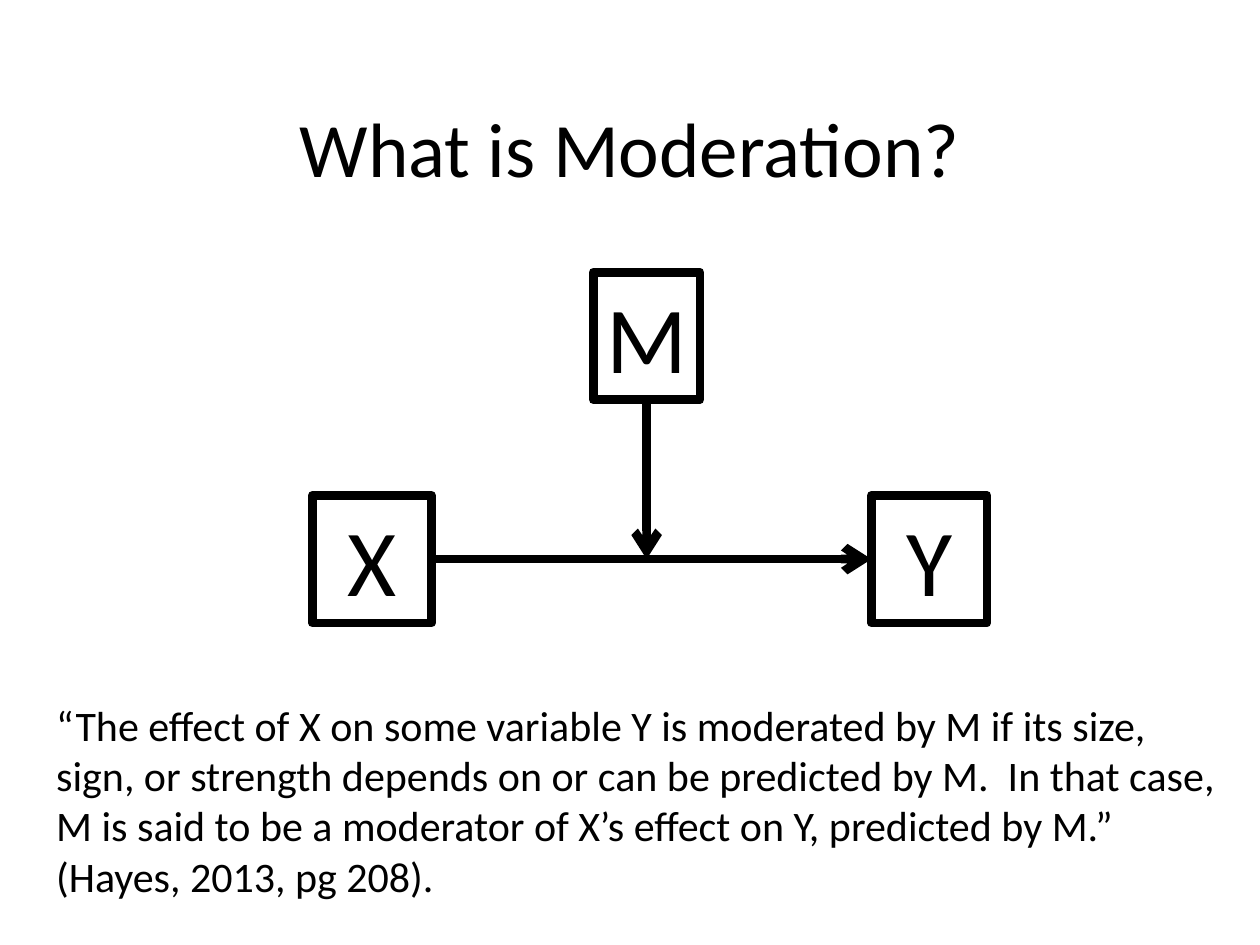
from lxml.etree import SubElement
from pptx import Presentation
from pptx.dml.color import RGBColor
from pptx.enum.shapes import MSO_CONNECTOR, MSO_SHAPE
from pptx.enum.text import MSO_ANCHOR, PP_ALIGN
from pptx.oxml.ns import qn
from pptx.util import Pt

BLACK = RGBColor(0, 0, 0)
FONT = "Calibri"
LINE_WIDTH = Pt(5)
BOX_HEIGHT = 73
ROW_TOP = 283
BOTTOM, LEFT, RIGHT = 2, 1, 3
QUOTE = [
    "“The effect of X on some variable Y is moderated by M if its size,",
    "sign, or strength depends on or can be predicted by M.  In that case,",
    "M is said to be a moderator of X’s effect on Y, predicted by M.”",
    "(Hayes, 2013, pg 208).",
]


def place(shape, left, top, width, height):
    shape.left, shape.top = Pt(left), Pt(top)
    shape.width, shape.height = Pt(width), Pt(height)


def format_text(frame, size, alignment):
    for paragraph in frame.paragraphs:
        paragraph.alignment = alignment
        for span in paragraph.runs:
            span.font.name = FONT
            span.font.size = Pt(size)
            span.font.color.rgb = BLACK


def set_title(page, text):
    title = page.shapes.title
    place(title, 0, 48, 720, 72)
    title.text_frame.text = text
    title.text_frame.vertical_anchor = MSO_ANCHOR.MIDDLE
    format_text(title.text_frame, 44, PP_ALIGN.CENTER)


def add_variable(page, name, left, top, width):
    box = page.shapes.add_shape(
        MSO_SHAPE.RECTANGLE, Pt(left), Pt(top), Pt(width), Pt(BOX_HEIGHT))
    box.shadow.inherit = False
    box.fill.background()
    box.line.color.rgb = BLACK
    box.line.width = LINE_WIDTH
    frame = box.text_frame
    frame.text = name
    frame.word_wrap = False
    frame.vertical_anchor = MSO_ANCHOR.MIDDLE
    format_text(frame, 54, PP_ALIGN.CENTER)
    return box


def add_arrow(page, source, side, end_x, end_y):
    """Draw an arrow from one side of the source box to a point."""
    arrow = page.shapes.add_connector(
        MSO_CONNECTOR.STRAIGHT, 0, 0, end_x, end_y)
    arrow.begin_connect(source, side)
    arrow.line.color.rgb = BLACK
    arrow.line.width = LINE_WIDTH
    SubElement(arrow.line._get_or_add_ln(), qn("a:tailEnd"), type="arrow")
    SubElement(arrow._element.spPr, qn("a:effectLst"))
    return arrow


def add_quote(page, lines):
    box = page.shapes.add_textbox(Pt(25), Pt(396), Pt(688), Pt(124))
    box.text_frame.text = "\n".join(lines)
    box.text_frame.word_wrap = False
    format_text(box.text_frame, 24, PP_ALIGN.LEFT)


def main():
    deck = Presentation()
    deck.slide_width, deck.slide_height = Pt(720), Pt(540)
    page = deck.slides.add_slide(deck.slide_layouts[5])
    set_title(page, "What is Moderation?")

    moderator = add_variable(page, "M", 339, 155.5, 61)
    predictor = add_variable(page, "X", 178.5, ROW_TOP, 68)
    outcome = add_variable(page, "Y", 498, ROW_TOP, 66)

    row_middle = outcome.top + outcome.height // 2
    effect = add_arrow(page, predictor, RIGHT, outcome.left, row_middle)
    effect.end_connect(outcome, LEFT)
    moderator_center = moderator.left + moderator.width // 2
    add_arrow(page, moderator, BOTTOM, moderator_center, row_middle)

    add_quote(page, QUOTE)
    deck.save("out.pptx")


if __name__ == "__main__":
    main()
